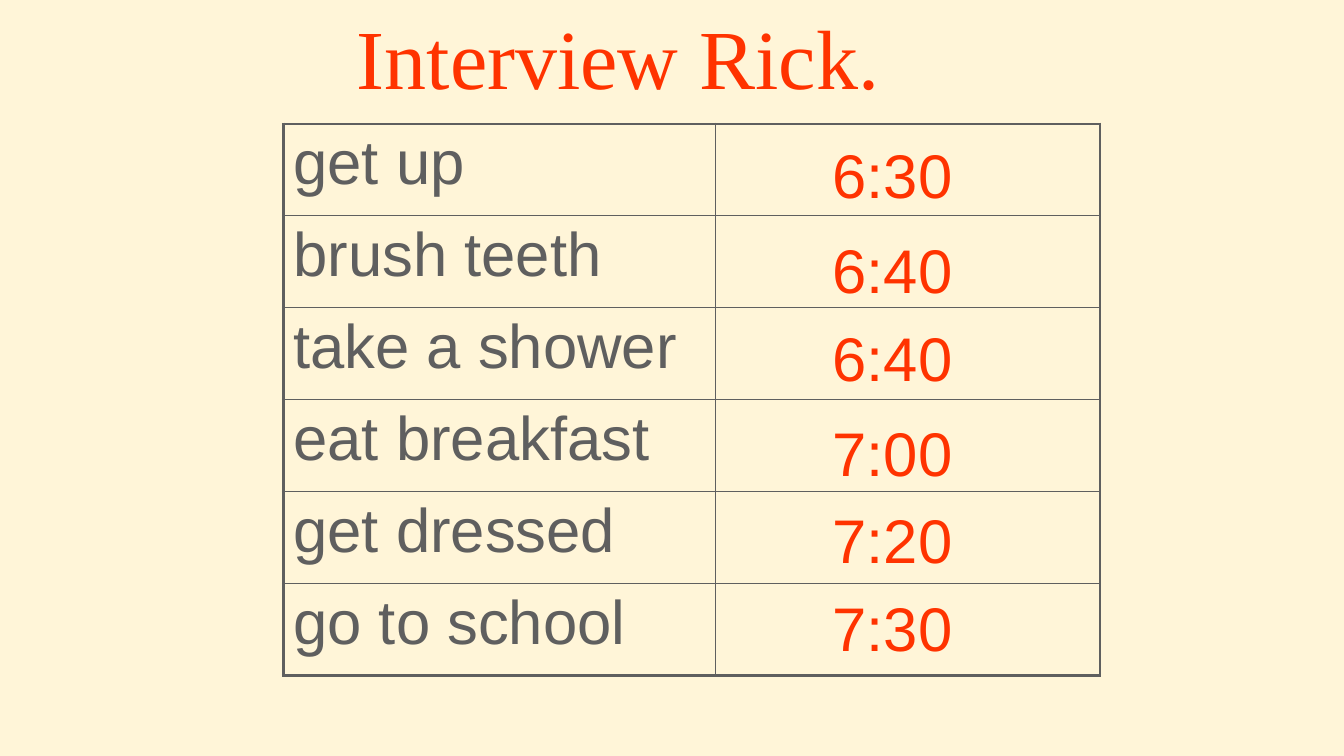
from lxml.etree import SubElement
from pptx import Presentation
from pptx.dml.color import RGBColor
from pptx.enum.text import MSO_ANCHOR as Anchor, PP_ALIGN as Align
from pptx.oxml.ns import qn
from pptx.util import Inches, Pt

CREAM, GRAY, RED = "FFF5D8", "5F5F5F", "FF3300"
THICK, THIN = 2.25, 1
COLUMN_WIDTHS = (4.29, 3.81)
TABLE_LEFT, TABLE_TOP, TABLE_HEIGHT = 2.81, 1.23, 5.47
TIME_LEFT, TIME_WIDTH, TIME_HEIGHT = 8.16, 1.55, 0.83
# activity, time, top of the time label
ROUTINE = (
    ("get up", "6:30", 1.31),
    ("brush teeth", "6:40", 2.25),
    ("take a shower", "6:40", 3.12),
    ("eat breakfast", "7:00", 4.07),
    ("get dressed", "7:20", 4.93),
    ("go to school", "7:30", 5.8),
)


def paint(color_format, color):
    color_format.rgb = RGBColor.from_string(color)


def write(frame, text, *, color, size=44, font="Arial"):
    frame.word_wrap = True
    frame.vertical_anchor = Anchor.TOP
    para = frame.paragraphs[0]
    para.alignment = Align.LEFT
    span = para.add_run()
    span.text = text
    span.font.size = Pt(size)
    span.font.name = font
    paint(span.font.color, color)


def set_borders(cell, widths):
    """Draw the left, right, top and bottom borders with widths in points."""
    properties = cell._tc.get_or_add_tcPr()
    for side, width in zip("LRTB", widths):
        line = SubElement(properties, qn(f"a:ln{side}"), w=str(Pt(width)))
        fill = SubElement(line, qn("a:solidFill"))
        SubElement(fill, qn("a:srgbClr"), val=GRAY)


def add_title(page):
    title = page.shapes.title
    title.left, title.top = Inches(3.44), 0
    title.width, title.height = Inches(5.38), Inches(1.1)
    title.text_frame.margin_right = 0  # room for the title on one line
    write(title.text_frame, "Interview Rick.", color=RED, size=60,
          font="Times New Roman")


def add_routine_table(page):
    count = len(ROUTINE)
    table = page.shapes.add_table(
        count, 2, Inches(TABLE_LEFT), Inches(TABLE_TOP),
        Inches(sum(COLUMN_WIDTHS)), Inches(TABLE_HEIGHT)).table
    table.first_row = table.horz_banding = False
    for column, width in zip(table.columns, COLUMN_WIDTHS):
        column.width = Inches(width)
    for row, (activity, _, _) in enumerate(ROUTINE):
        write(table.cell(row, 0).text_frame, activity, color=GRAY)
        for column in range(2):
            cell = table.cell(row, column)
            outer = (column == 0, column == 1, row == 0, row == count - 1)
            set_borders(cell, [THICK if edge else THIN for edge in outer])
            cell.fill.background()


def add_time(page, time, top):
    box = page.shapes.add_textbox(Inches(TIME_LEFT), Inches(top),
                                  Inches(TIME_WIDTH), Inches(TIME_HEIGHT))
    write(box.text_frame, time, color=RED)


def main():
    deck = Presentation()
    deck.slide_width, deck.slide_height = Inches(13.33), Inches(7.5)
    page = deck.slides.add_slide(deck.slide_layouts.get_by_name("Title Only"))
    page.background.fill.solid()
    paint(page.background.fill.fore_color, CREAM)
    add_title(page)
    add_routine_table(page)
    for _, time, top in ROUTINE:
        add_time(page, time, top)
    deck.save("out.pptx")


if __name__ == "__main__":
    main()
